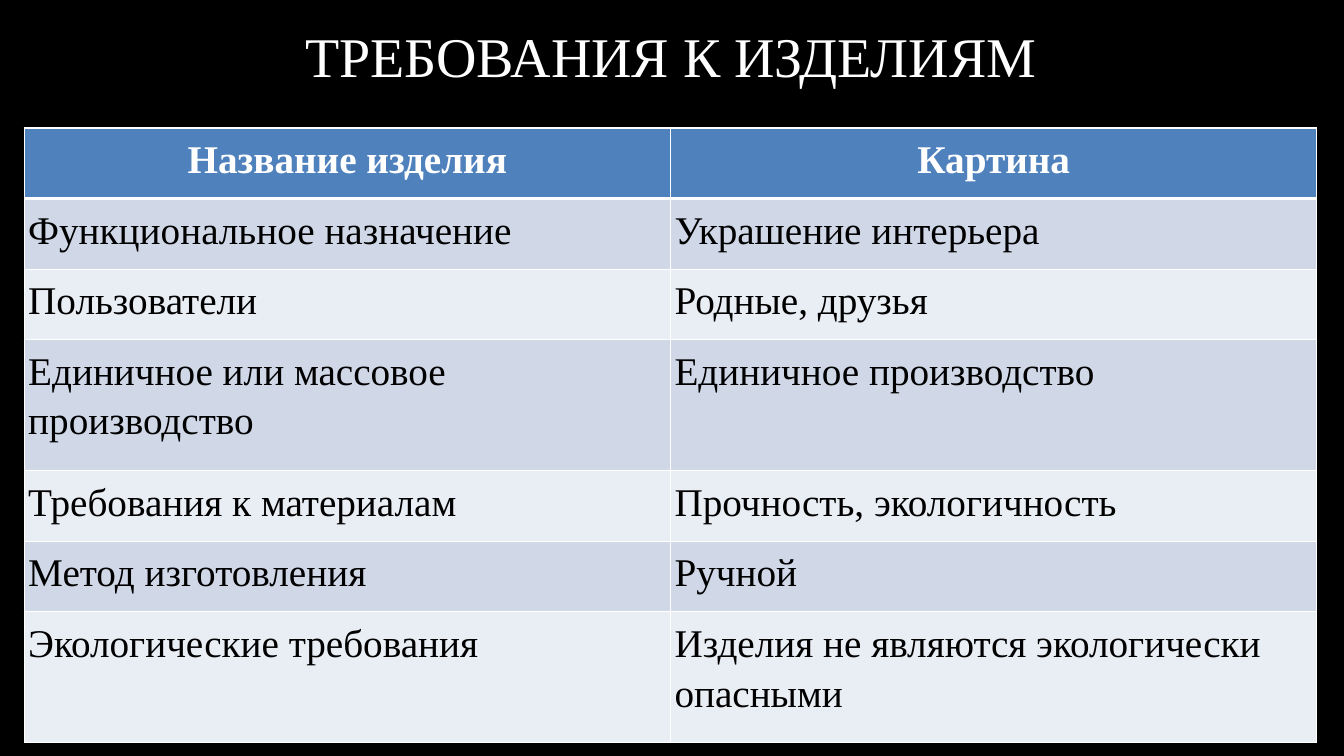
from dataclasses import dataclass

from lxml.etree import SubElement
from pptx import Presentation
from pptx.dml.color import RGBColor
from pptx.enum.text import MSO_ANCHOR, PP_ALIGN
from pptx.oxml.ns import qn
from pptx.util import Inches, Pt


@dataclass(frozen=True)
class Theme:
    font: str = "Times New Roman"
    title_size: int = 40
    table_size: int = 28
    background: str = "000000"
    light: str = "FFFFFF"
    dark: str = "000000"
    header: str = "4F81BD"
    bands: tuple = ("D0D8E8", "E9EDF4")
    border: float = 1
    header_border: float = 3


REQUIREMENTS = [
    ("Название изделия", "Картина"),
    ("Функциональное назначение", "Украшение интерьера"),
    ("Пользователи", "Родные, друзья"),
    ("Единичное или массовое производство", "Единичное производство"),
    ("Требования к материалам", "Прочность, экологичность"),
    ("Метод изготовления", "Ручной"),
    ("Экологические требования", "Изделия не являются экологически опасными"),
]
SINGLE_ROW, DOUBLE_ROW = 0.7, 1.3
ROW_HEIGHTS = [DOUBLE_ROW if row in (3, 6) else SINGLE_ROW for row in range(len(REQUIREMENTS))]


class SlideBuilder:
    def __init__(self, presentation, theme):
        self.theme = theme
        self.slide = presentation.slides.add_slide(presentation.slide_layouts[5])
        fill = self.slide.background.fill
        fill.solid()
        fill.fore_color.rgb = RGBColor.from_string(theme.background)

    def format_paragraph(self, paragraph, size, color, spacing, alignment, bold=False):
        paragraph.alignment = alignment
        paragraph.line_spacing = spacing
        for run in paragraph.runs:
            run.font.name = self.theme.font
            run.font.size = Pt(size)
            run.font.bold = bold
            run.font.color.rgb = RGBColor.from_string(color)

    def add_title(self, text, left, top, width, height):
        title = self.slide.shapes.title
        title.left, title.top = Inches(left), Inches(top)
        title.width, title.height = Inches(width), Inches(height)
        frame = title.text_frame
        frame.text = text
        frame.word_wrap = True
        frame.vertical_anchor = MSO_ANCHOR.TOP
        frame.margin_top = Inches(0.06)
        self.format_paragraph(
            frame.paragraphs[0], self.theme.title_size, self.theme.light, 0.9, PP_ALIGN.CENTER
        )

    def add_borders(self, cell, widths):
        properties = cell._tc.get_or_add_tcPr()
        for index, (side, width) in enumerate(widths.items()):
            line = properties.makeelement(qn(f"a:ln{side}"), {"w": str(Pt(width))})
            fill = SubElement(line, qn("a:solidFill"))
            SubElement(fill, qn("a:srgbClr"), val=self.theme.light)
            properties.insert(index, line)

    def add_cell(self, cell, text, row):
        theme = self.theme
        is_header = row == 0
        cell.text = text
        cell.margin_left = cell.margin_right = Inches(0.04)
        cell.margin_top = cell.margin_bottom = Inches(0.04)
        cell.fill.solid()
        color = theme.header if is_header else theme.bands[(row - 1) % 2]
        cell.fill.fore_color.rgb = RGBColor.from_string(color)
        self.format_paragraph(
            cell.text_frame.paragraphs[0],
            theme.table_size,
            theme.light if is_header else theme.dark,
            1.15,
            PP_ALIGN.CENTER if is_header else PP_ALIGN.LEFT,
            is_header,
        )
        widths = dict.fromkeys("LRTB", theme.border)
        if is_header:
            widths["B"] = theme.header_border
        elif row == 1:
            widths["T"] = theme.header_border
        self.add_borders(cell, widths)

    def add_table(self, rows, row_heights, left, top, width):
        table = self.slide.shapes.add_table(
            len(rows), len(rows[0]), Inches(left), Inches(top), Inches(width), Inches(sum(row_heights))
        ).table
        for column in table.columns:
            column.width = Inches(width / len(rows[0]))
        for row, (texts, height) in enumerate(zip(rows, row_heights)):
            table.rows[row].height = Inches(height)
            for column, text in enumerate(texts):
                self.add_cell(table.cell(row, column), text, row)


def main():
    presentation = Presentation()
    presentation.slide_width = Inches(13.33)
    presentation.slide_height = Inches(7.5)
    builder = SlideBuilder(presentation, Theme())
    builder.add_title("ТРЕБОВАНИЯ К ИЗДЕЛИЯМ", 0.33, 0.23, 12.65, 1.29)
    builder.add_table(REQUIREMENTS, ROW_HEIGHTS, 0.24, 1.27, 12.82)
    presentation.save("out.pptx")


if __name__ == "__main__":
    main()
